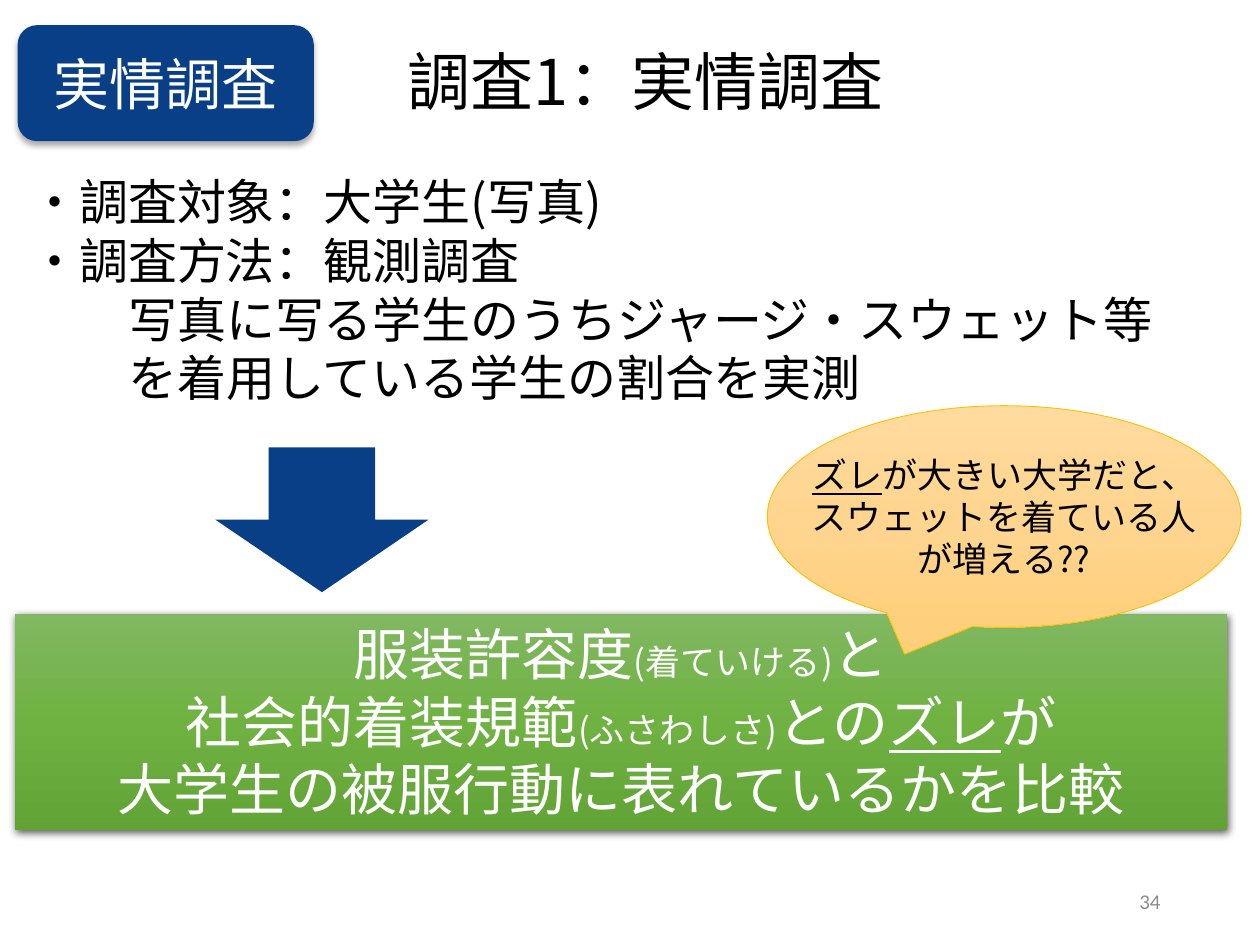
from dataclasses import dataclass
from typing import NamedTuple, Optional

import pptx
import pptx.dml.color
import pptx.enum.shapes
import pptx.enum.text
import pptx.oxml
import pptx.oxml.ns
import pptx.util

ALIGN = pptx.enum.text.PP_ALIGN
ANCHOR = pptx.enum.text.MSO_ANCHOR
SHAPE = pptx.enum.shapes.MSO_SHAPE
COLUMNS, ROWS = 100, 75


@dataclass(frozen=True)
class Theme:
    font: str = "Noto Sans CJK JP"
    number_font: str = "Calibri"
    navy: str = "093F86"
    black: str = "000000"
    white: str = "FFFFFF"
    gray: str = "8C8C8C"
    gold: str = "FFC000"
    green: tuple = ("81B861", "6FB242", "62A336")
    orange: tuple = ("FFDB9E", "FFD590", "FFD07C")
    title: int = 36
    heading: int = 32
    body: int = 28
    note: int = 20
    number: int = 12


class Frame(NamedTuple):
    col: float
    row: float
    cols: float
    rows: float


class Shadow(NamedTuple):
    alpha: int
    blur: float
    distance: float


class Run(NamedTuple):
    text: str
    size: Optional[int] = None
    underline: Optional[bool] = None


class TextStyle(NamedTuple):
    size: int
    color: str
    align: ALIGN = ALIGN.CENTER
    anchor: ANCHOR = ANCHOR.MIDDLE
    font: str = "Noto Sans CJK JP"
    wrap: bool = True


class Block(NamedTuple):
    kind: SHAPE
    frame: Frame
    fill: object
    lines: tuple = ()
    style: Optional[TextStyle] = None
    shadow: Optional[Shadow] = None
    line: Optional[str] = None
    rotation: float = 0
    adjustments: tuple = ()
    inset: Optional[float] = None


T = Theme()


def rgb(value: str):
    return pptx.dml.color.RGBColor.from_string(value)


def xml(body: str):
    return pptx.oxml.parse_xml(body.replace(" ", f" {pptx.oxml.ns.nsdecls('a')} ", 1))


def set_all(target, values: dict) -> None:
    for name, value in values.items():
        setattr(target, name, value)


def place(prs, frame: Frame) -> tuple:
    dx, dy = prs.slide_width / COLUMNS, prs.slide_height / ROWS
    return tuple(round(n * d) for n, d in zip(frame, (dx, dy, dx, dy)))


def write(sp, lines: tuple, style: TextStyle) -> None:
    tf = sp.text_frame
    set_all(tf, {"word_wrap": style.wrap, "vertical_anchor": style.anchor,
                 "auto_size": pptx.enum.text.MSO_AUTO_SIZE.NONE})
    for i, runs in enumerate(lines):
        p = tf.add_paragraph() if i else tf.paragraphs[0]
        set_all(p, {"alignment": style.align, "space_before": pptx.util.Pt(0)})
        for run in runs:
            r = p.add_run()
            r.text = run.text
            set_all(r.font, {"name": style.font, "underline": run.underline,
                             "size": pptx.util.Pt(run.size or style.size)})
            r.font.color.rgb = rgb(style.color)
            r.font._element.append(xml(f'<a:ea typeface="{style.font}"/>'))


def paint(sp, fill) -> None:
    if isinstance(fill, str):
        sp.fill.solid()
        sp.fill.fore_color.rgb = rgb(fill)
        return
    sp.fill.gradient()
    grad = sp._element.spPr.find(pptx.oxml.ns.qn("a:gradFill"))
    stops = "".join(f'<a:gs pos="{i * 50000}"><a:srgbClr val="{c}"/></a:gs>'
                    for i, c in enumerate(fill))
    for child in list(grad):
        grad.remove(child)
    grad.append(xml(f"<a:gsLst >{stops}</a:gsLst>"))
    grad.append(xml('<a:lin ang="5400000" scaled="0"/>'))


def cast(sp, shadow: Shadow) -> None:
    effects = sp._element.spPr.find(pptx.oxml.ns.qn("a:effectLst"))
    blur, distance = pptx.util.Pt(shadow.blur), pptx.util.Pt(shadow.distance)
    effects.append(xml(
        f'<a:outerShdw blurRad="{blur}" dist="{distance}" dir="5400000" rotWithShape="0">'
        f'<a:srgbClr val="{T.black}"><a:alpha val="{shadow.alpha * 1000}"/></a:srgbClr>'
        '</a:outerShdw>'))


def draw_block(prs, s, block: Block) -> None:
    sp = s.shapes.add_shape(block.kind, *place(prs, block.frame))
    sp.rotation = block.rotation
    for i, value in enumerate(block.adjustments):
        sp.adjustments[i] = value
    paint(sp, block.fill)
    if block.line:
        sp.line.color.rgb = rgb(block.line)
        sp.line.width = pptx.util.Pt(0.5)
    else:
        sp.line.fill.background()
    sp.shadow.inherit = False
    if block.shadow:
        cast(sp, block.shadow)
    if block.inset is not None:
        set_all(sp.text_frame, {f"margin_{side}": pptx.util.Inches(block.inset)
                                for side in ("left", "top", "right", "bottom")})
    if block.style:
        write(sp, block.lines, block.style)


def fill_placeholder(prs, sp, frame: Frame, lines: tuple, style: TextStyle) -> None:
    set_all(sp, dict(zip(("left", "top", "width", "height"), place(prs, frame))))
    write(sp, lines, style)


def outline_body(sp, levels: tuple) -> None:
    for p, level in zip(sp.text_frame.paragraphs, levels):
        pPr = p._p.get_or_add_pPr()
        pPr.set("marL", str(pptx.util.Pt(level * T.body)))
        pPr.set("indent", "0")
        pPr.append(xml("<a:buNone />"))


TITLE = ((Run("調査1：実情調査"),),)
BODY = (
    (Run("・調査対象：大学生(写真)"),),
    (Run("・調査方法：観測調査"),),
    (Run("写真に写る学生のうちジャージ・スウェット等"),),
    (Run("を着用している学生の割合を実測"),),
)
BLOCKS = (
    Block(SHAPE.ROUNDED_RECTANGLE, Frame(1.4, 2, 23.5, 9.2), T.navy,
          ((Run("実情調査"),),), TextStyle(T.heading, T.white),
          Shadow(32, 3.5, 2.2)),
    Block(SHAPE.RECTANGLE, Frame(1.2, 48.7, 96.2, 17.2), T.green,
          ((Run("服装許容度"), Run("(着ていける)", T.note), Run("と")),
           (Run("社会的着装規範"), Run("(ふさわしさ)", T.note), Run("との"),
            Run("ズレ", underline=True), Run("が")),
           (Run("大学生の被服行動に表れているかを比較"),)),
          TextStyle(T.heading, T.white, anchor=ANCHOR.TOP), Shadow(63, 4.5, 1.5)),
    Block(SHAPE.RIGHT_ARROW, Frame(19.8, 32.8, 11.5, 16.9), T.navy, rotation=90),
    Block(SHAPE.OVAL_CALLOUT, Frame(60.9, 32.2, 37.6, 17.6), T.orange,
          ((Run("ズレ", underline=True), Run("が大きい大学だと、")),
           (Run("スウェットを着ている人"),),
           (Run("が増える??"),)),
          TextStyle(T.note, T.black, wrap=False), line=T.gold,
          adjustments=(-0.21, 0.62), inset=0),
)


def main() -> None:
    prs = pptx.Presentation()
    set_all(prs, {"slide_width": pptx.util.Inches(10), "slide_height": pptx.util.Inches(7.5)})
    s = prs.slides.add_slide(prs.slide_layouts[1])
    fill_placeholder(prs, s.shapes.title, Frame(24.9, 2.9, 52.7, 7.1), TITLE,
                     TextStyle(T.title, T.black, anchor=ANCHOR.TOP))
    body = s.placeholders[1]
    fill_placeholder(prs, body, Frame(1.4, 13.1, 98.6, 19.9), BODY,
                     TextStyle(T.body, T.black, ALIGN.LEFT, ANCHOR.TOP))
    outline_body(body, (0, 0, 2, 2))
    number = s.shapes.add_textbox(*place(prs, Frame(70.6, 69.5, 22.5, 4)))
    write(number, ((Run("34"),),),
          TextStyle(T.number, T.gray, ALIGN.RIGHT, font=T.number_font))
    for block in BLOCKS:
        draw_block(prs, s, block)
    prs.save("out.pptx")


if __name__ == "__main__":
    main()
